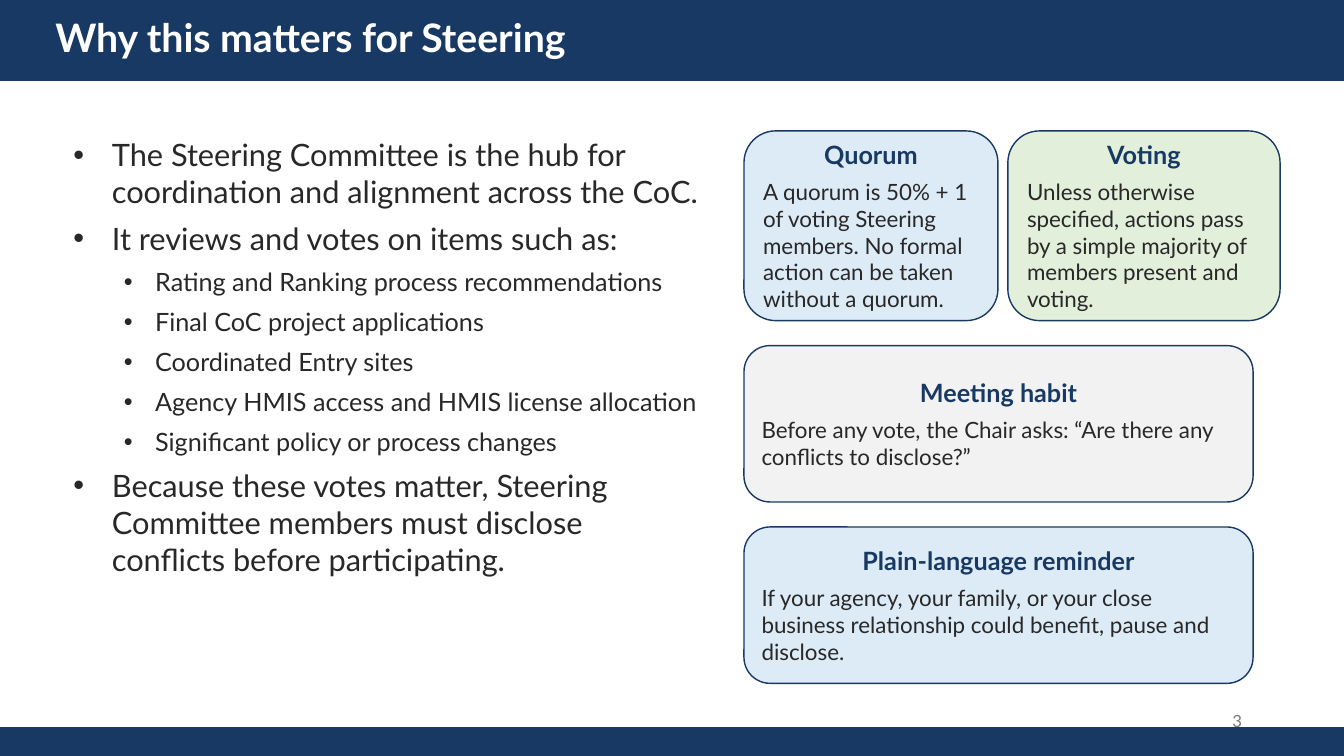
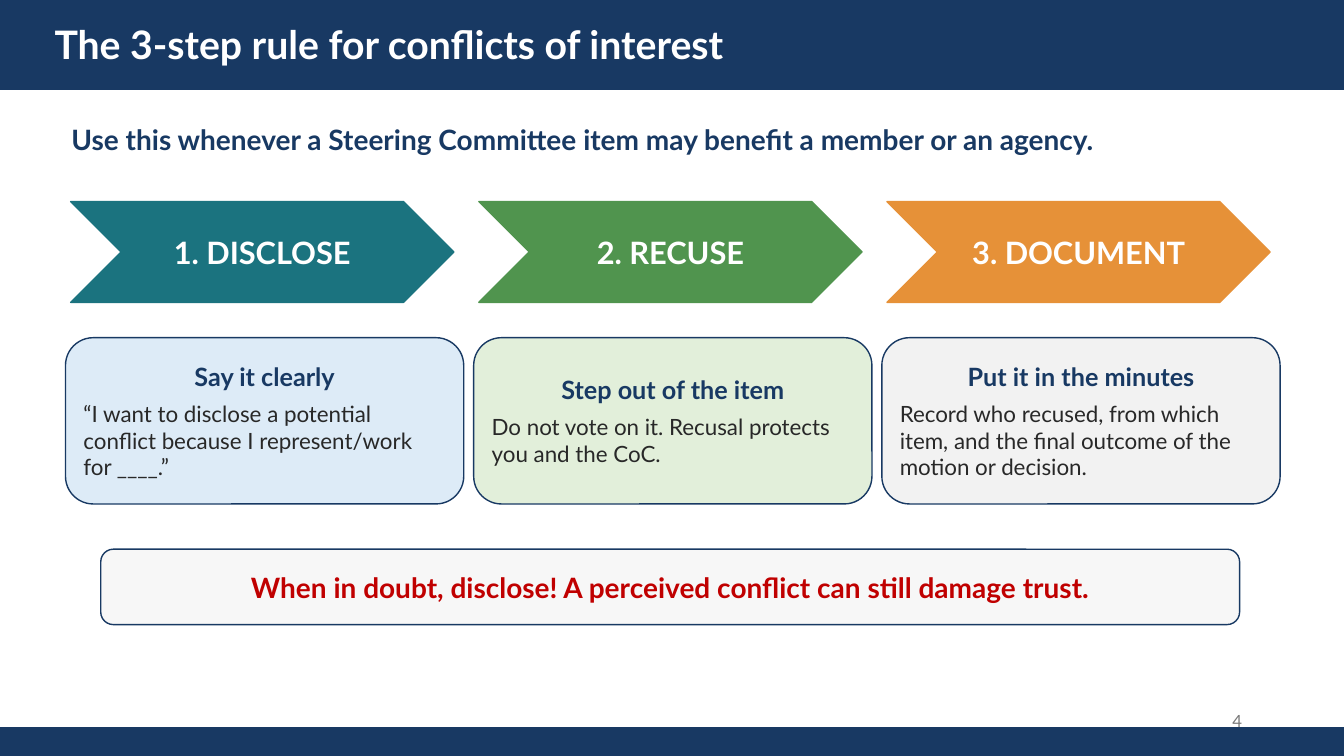
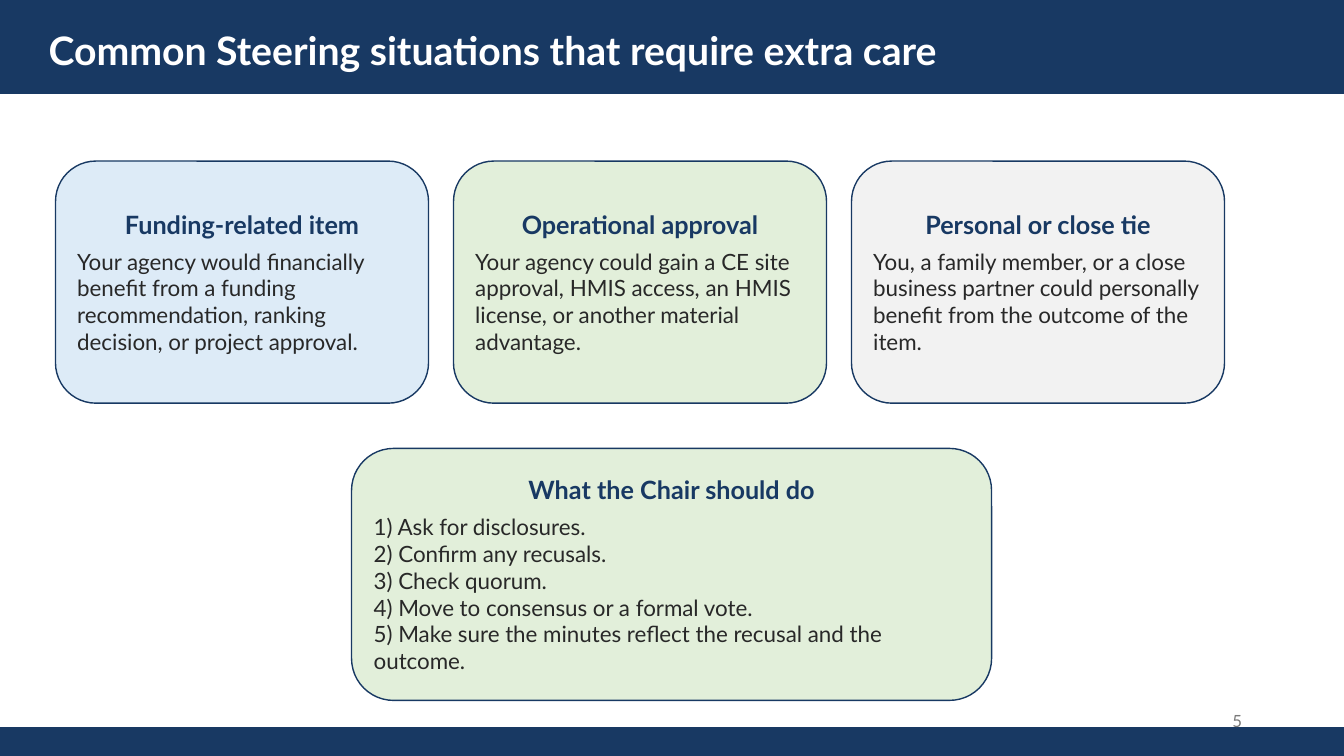
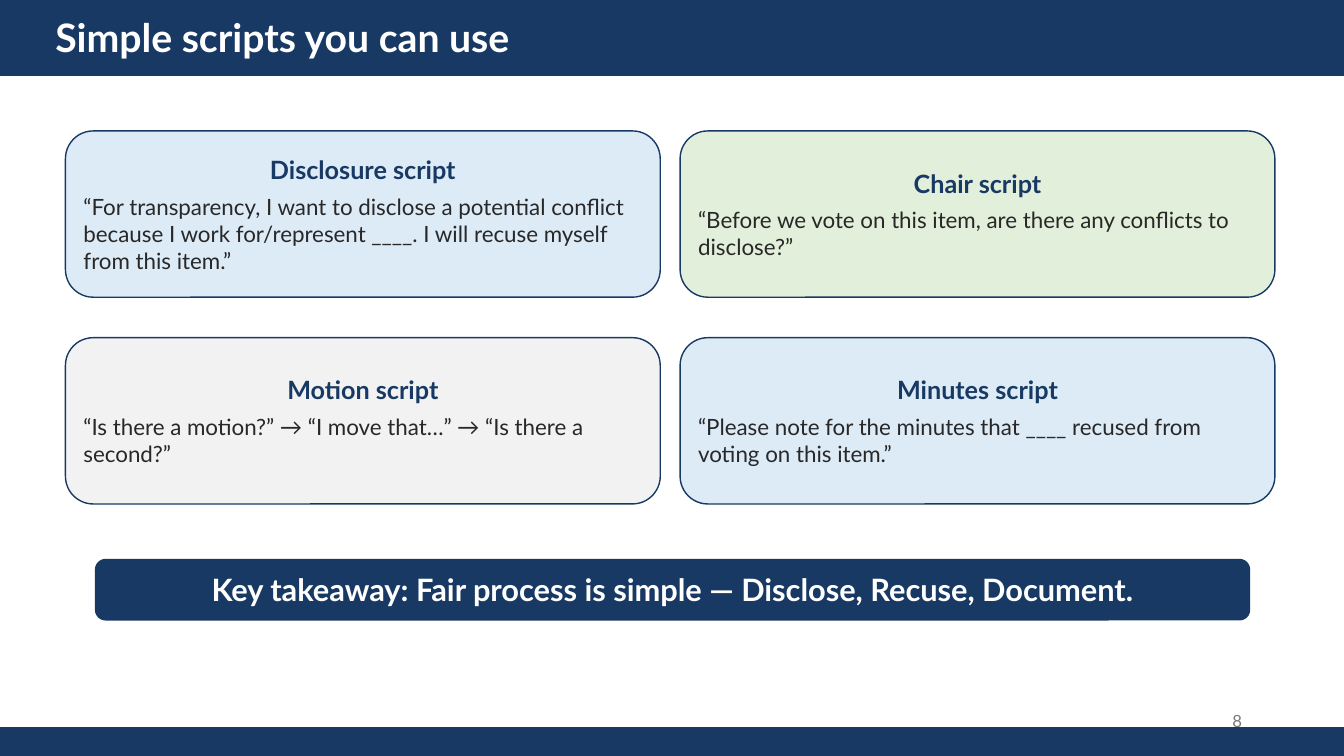
from dataclasses import dataclass

from lxml.etree import SubElement
from pptx import Presentation
from pptx.dml.color import RGBColor
from pptx.enum.shapes import MSO_SHAPE
from pptx.enum.text import MSO_ANCHOR, MSO_AUTO_SIZE, PP_ALIGN
from pptx.oxml.ns import qn
from pptx.util import Cm, Pt

FONT = "Lato"
NAVY, INK, WHITE, GREY, RED = "183963", "282828", "FFFFFF", "797979", "C00000"
SKY, MINT, MIST, PALE = "DDEBF7", "E2EFDA", "F2F2F2", "F7F7F7"
TEAL, GREEN, ORANGE = "1B737F", "50944E", "E69138"
SLIDE_WIDTH, SLIDE_HEIGHT = 33.87, 19.05
FOOTER_HEIGHT = 0.71
TITLE_ONLY, TITLE_AND_CONTENT = 5, 1


@dataclass
class Box:
    left: float
    top: float
    width: float
    height: float

    def lengths(self):
        return [Cm(side) for side in (self.left, self.top, self.width, self.height)]

    def grid(self, columns, rows=1, gap_x=0, gap_y=0):
        width = (self.width - gap_x * (columns - 1)) / columns
        height = (self.height - gap_y * (rows - 1)) / rows
        return [
            Box(self.left + column * (width + gap_x), self.top + row * (height + gap_y), width, height)
            for row in range(rows)
            for column in range(columns)
        ]


def color(hex_code):
    return RGBColor.from_string(hex_code)


def style(paragraph, size, hex_code, bold=False, align=PP_ALIGN.LEFT):
    paragraph.alignment = align
    for run in paragraph.runs:
        run.font.name = FONT
        run.font.size = Pt(size)
        run.font.bold = bold
        run.font.color.rgb = color(hex_code)


def move(placeholder, box):
    placeholder.left, placeholder.top, placeholder.width, placeholder.height = box.lengths()
    frame = placeholder.text_frame
    frame.word_wrap = True
    frame.auto_size = MSO_AUTO_SIZE.NONE
    frame.vertical_anchor = MSO_ANCHOR.TOP
    return frame


def add_panel(slide, box, fill, line=NAVY, preset=MSO_SHAPE.ROUNDED_RECTANGLE):
    panel = slide.shapes.add_shape(preset, *box.lengths())
    panel.shadow.inherit = False
    panel.fill.solid()
    panel.fill.fore_color.rgb = color(fill)
    panel.line.color.rgb = color(line)
    panel.line.width = Pt(1)
    panel.text_frame.word_wrap = True
    panel.text_frame.vertical_anchor = MSO_ANCHOR.MIDDLE
    return panel


def add_label(slide, box, text, size, hex_code, bold=False, align=PP_ALIGN.LEFT, anchor=MSO_ANCHOR.TOP):
    frame = slide.shapes.add_textbox(*box.lengths()).text_frame
    frame.word_wrap = True
    frame.vertical_anchor = anchor
    frame.text = text
    style(frame.paragraphs[0], size, hex_code, bold, align)


def add_banner(slide, box, text, size, hex_code, fill, line=NAVY, preset=MSO_SHAPE.ROUNDED_RECTANGLE):
    frame = add_panel(slide, box, fill, line, preset).text_frame
    frame.text = text
    style(frame.paragraphs[0], size, hex_code, True, PP_ALIGN.CENTER)


def add_card(slide, box, fill, heading, text):
    frame = add_panel(slide, box, fill).text_frame
    frame.text = f"{heading}\n{text}"
    first, *rest = frame.paragraphs
    style(first, 18, NAVY, True, PP_ALIGN.CENTER)
    first.space_after = Pt(6)
    for paragraph in rest:
        style(paragraph, 16, INK)


def add_cards(slide, boxes, cards):
    for box, card in zip(boxes, cards):
        add_card(slide, box, *card)


def add_bullets(placeholder, box, items):
    frame = move(placeholder, box)
    frame.margin_left = frame.margin_right = 0
    frame.text = "\n".join(text for _, text in items)
    for paragraph, (level, _) in zip(frame.paragraphs, items):
        margin, hanging, size = [(0.97, 0.97, 22), (2.06, 0.79, 18)][level]
        paragraph.level = level
        properties = paragraph._p.get_or_add_pPr()
        properties.set("marL", str(Cm(margin)))
        properties.set("indent", str(-Cm(hanging)))
        SubElement(properties, qn("a:buFont"), typeface="Arial")
        SubElement(properties, qn("a:buChar"), char="•")
        paragraph.space_before = Pt(0)
        paragraph.space_after = Pt(7)
        style(paragraph, size, INK)


def start_slide(deck, title_text, title_box, header_height, number, layout=TITLE_ONLY):
    slide = deck.slides.add_slide(deck.slide_layouts[layout])
    title = slide.shapes.title
    header = Box(0, 0, SLIDE_WIDTH, header_height)
    footer = Box(0, SLIDE_HEIGHT - FOOTER_HEIGHT, SLIDE_WIDTH, FOOTER_HEIGHT)
    for box in (header, footer):
        band = add_panel(slide, box, NAVY, preset=MSO_SHAPE.RECTANGLE)
        title.element.addprevious(band.element)
    frame = move(title, title_box)
    frame.text = title_text
    style(frame.paragraphs[0], 28, WHITE, True)
    add_label(slide, Box(23.93, 17.65, 7.62, 1.02), number, 12, GREY,
              align=PP_ALIGN.RIGHT, anchor=MSO_ANCHOR.MIDDLE)
    return slide


def add_rules_column(slide, box):
    gap, row_gap = 0.25, 0.63
    quorum_width, wide_width, top_height, wide_height = 6.4, 12.83, 4.78, 3.94
    voting_left = quorum_width + gap
    habit_top = box.top + top_height + row_gap
    boxes = [
        Box(box.left, box.top, quorum_width, top_height),
        Box(box.left + voting_left, box.top, box.width - voting_left, top_height),
        *Box(box.left, habit_top, wide_width, 2 * wide_height + row_gap).grid(1, 2, gap_y=row_gap),
    ]
    add_cards(slide, boxes, [
        (SKY, "Quorum", "A quorum is 50% + 1 of voting Steering members. No formal action can be taken without a quorum."),
        (MINT, "Voting", "Unless otherwise specified, actions pass by a simple majority of members present and voting."),
        (MIST, "Meeting habit", "Before any vote, the Chair asks: “Are there any conflicts to disclose?”"),
        (SKY, "Plain-language reminder",
         "If your agency, your family, or your close business relationship could benefit, pause and disclose."),
    ])


def build_why_slide(deck):
    slide = start_slide(deck, "Why this matters for Steering", Box(1.14, 0.2, 28.65, 1.45), 2.03, "3",
                        TITLE_AND_CONTENT)
    add_bullets(slide.placeholders[1], Box(1.85, 3.3, 15.75, 12.19), [
        (0, "The Steering Committee is the hub for coordination and alignment across the CoC."),
        (0, "It reviews and votes on items such as:"),
        (1, "Rating and Ranking process recommendations"),
        (1, "Final CoC project applications"),
        (1, "Coordinated Entry sites"),
        (1, "Agency HMIS access and HMIS license allocation"),
        (1, "Significant policy or process changes"),
        (0, "Because these votes matter, Steering Committee members must disclose conflicts before participating."),
    ])
    add_rules_column(slide, Box(18.75, 3.3, 13.51, 13.92))


def build_steps_slide(deck):
    slide = start_slide(deck, "The 3-step rule for conflicts of interest", Box(1.12, 0.38, 27.81, 1.45), 2.24, "4")
    add_label(slide, Box(1.55, 2.97, 27.05, 1.12),
              "Use this whenever a Steering Committee item may benefit a member or an agency.", 20, NAVY, True)
    steps = [("1. DISCLOSE", TEAL), ("2. RECUSE", GREEN), ("3. DOCUMENT", ORANGE)]
    for box, (step, fill) in zip(Box(1.78, 5.08, 30.23, 2.54).grid(3, gap_x=0.63), steps):
        add_banner(slide, box, step, 22, WHITE, fill, fill, MSO_SHAPE.CHEVRON)
    add_cards(slide, Box(1.65, 8.51, 30.61, 4.19).grid(3, gap_x=0.25), [
        (SKY, "Say it clearly", "“I want to disclose a potential conflict because I represent/work for ____.”"),
        (MINT, "Step out of the item", "Do not vote on it. Recusal protects you and the CoC."),
        (MIST, "Put it in the minutes",
         "Record who recused, from which item, and the final outcome of the motion or decision."),
    ])
    add_banner(slide, Box(2.54, 13.84, 28.7, 1.9),
               "When in doubt, disclose! A perceived conflict can still damage trust.", 20, RED, PALE)


def build_situations_slide(deck):
    slide = start_slide(deck, "Common Steering situations that require extra care",
                        Box(0.97, 0.53, 28.45, 1.45), 2.36, "5")
    add_cards(slide, Box(1.4, 4.06, 29.46, 6.1).grid(3, gap_x=0.63), [
        (SKY, "Funding-related item",
         "Your agency would financially benefit from a funding recommendation, ranking decision, or project approval."),
        (MINT, "Operational approval",
         "Your agency could gain a CE site approval, HMIS access, an HMIS license, or another material advantage."),
        (MIST, "Personal or close tie",
         "You, a family member, or a close business partner could personally benefit from the outcome of the item."),
    ])
    chair_steps = [
        "1) Ask for disclosures.",
        "2) Confirm any recusals.",
        "3) Check quorum.",
        "4) Move to consensus or a formal vote.",
        "5) Make sure the minutes reflect the recusal and the outcome.",
    ]
    add_card(slide, Box(8.86, 11.3, 16.13, 6.35), MINT, "What the Chair should do", "\n".join(chair_steps))


def build_scripts_slide(deck):
    slide = start_slide(deck, "Simple scripts you can use", Box(1.14, 0.2, 12.62, 1.45), 1.9, "8")
    add_cards(slide, Box(1.65, 3.3, 30.48, 9.4).grid(2, 2, 0.5, 1.02), [
        (SKY, "Disclosure script",
         "“For transparency, I want to disclose a potential conflict because I work for/represent ____. "
         "I will recuse myself from this item.”"),
        (MINT, "Chair script", "“Before we vote on this item, are there any conflicts to disclose?”"),
        (MIST, "Motion script", "“Is there a motion?” → “I move that…” → “Is there a second?”"),
        (SKY, "Minutes script", "“Please note for the minutes that ____ recused from voting on this item.”"),
    ])
    add_banner(slide, Box(2.41, 14.1, 29.08, 1.52),
               "Key takeaway: Fair process is simple — Disclose, Recuse, Document.", 22, WHITE, NAVY)


def main():
    deck = Presentation()
    deck.slide_width, deck.slide_height = Cm(SLIDE_WIDTH), Cm(SLIDE_HEIGHT)
    build_why_slide(deck)
    build_steps_slide(deck)
    build_situations_slide(deck)
    build_scripts_slide(deck)
    deck.save("out.pptx")


if __name__ == "__main__":
    main()
